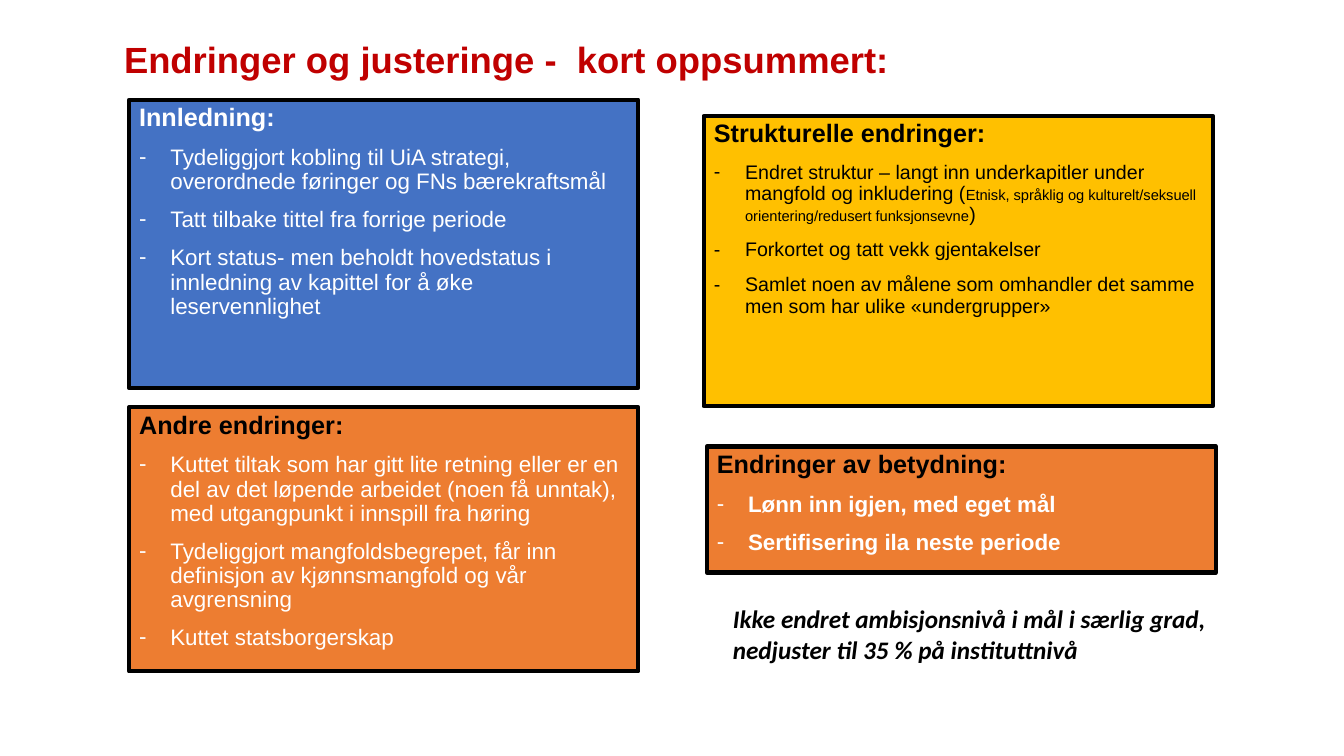
from dataclasses import dataclass

from lxml import etree
from pptx import Presentation
from pptx import util as u
from pptx.dml.color import RGBColor
from pptx.enum import text
from pptx.oxml.ns import qn

CELL = 0.1  # side of a grid cell in inches
BLUE, YELLOW, ORANGE = "4472C4", "FFC000", "ED7D31"
RED, BLACK, WHITE = "C00000", "000000", "FFFFFF"
SMALL = 10.5


@dataclass
class Panel:
    placeholder: int
    col: float
    row: float
    rows: float
    fill: str
    heading: str
    heading_color: str
    items: list[list[str]]  # odd runs of an item are set small
    size: float = 16
    color: str = WHITE
    bold: bool = False
    cols: float = 50.5


PANELS = [
    Panel(1, 12.8, 9.9, 28.6, BLUE, "Innledning:", WHITE, [
        ["Tydeliggjort kobling til UiA strategi, overordnede føringer og FNs bærekraftsmål"],
        ["Tatt tilbake tittel fra forrige periode"],
        ["Kort status- men beholdt hovedstatus i innledning av kapittel for å øke leservennlighet"],
    ]),
    Panel(2, 69.8, 11.5, 28.8, YELLOW, "Strukturelle endringer:", BLACK, [
        ["Endret struktur – langt inn underkapitler under mangfold og inkludering (",
         "Etnisk, språklig og kulturelt/seksuell orientering/redusert funksjonsevne", ")"],
        ["Forkortet og tatt vekk gjentakelser"],
        ["Samlet noen av målene som omhandler det samme men som har ulike «undergrupper»"],
    ], size=14, color=BLACK),
    Panel(3, 12.8, 40.4, 26.2, ORANGE, "Andre endringer:", BLACK, [
        ["Kuttet tiltak som har gitt lite retning eller er en del av det løpende arbeidet "
         "(noen få unntak), med utgangpunkt i innspill fra høring"],
        ["Tydeliggjort mangfoldsbegrepet, får inn definisjon av kjønnsmangfold og vår avgrensning"],
        ["Kuttet statsborgerskap"],
    ]),
    Panel(4, 70.1, 44.3, 12.5, ORANGE, "Endringer av betydning:", BLACK, [
        ["Lønn inn igjen, med eget mål"],
        ["Sertifisering ila neste periode"],
    ], bold=True),
]


def rgb(color: str) -> RGBColor:
    return RGBColor.from_string(color)


def grid(n: float) -> int:
    return u.Inches(n * CELL)


def place(sp, col: float, row: float, cols: float, rows: float) -> None:
    sp.left, sp.top, sp.width, sp.height = map(grid, (col, row, cols, rows))


def set_frame(tf) -> None:
    tf.word_wrap = True
    tf.auto_size = text.MSO_AUTO_SIZE.NONE
    tf.vertical_anchor = text.MSO_ANCHOR.TOP


def style(r, size: float, color: str, bold: bool, name: str = "Arial") -> None:
    r.font.size, r.font.bold, r.font.name = u.Pt(size), bold, name
    r.font.color.rgb = rgb(color)


def set_paragraph(p, before: float = 0, hang: float = 0, bullet: str = "") -> None:
    pPr = p._p.get_or_add_pPr()
    pPr.set("marL", str(u.Inches(hang)))
    pPr.set("indent", str(-u.Inches(hang)))
    if bullet:
        etree.SubElement(pPr, qn("a:buChar")).set("char", bullet)
    else:
        etree.SubElement(pPr, qn("a:buNone"))
    p.alignment = text.PP_ALIGN.LEFT
    p.line_spacing = 0.9
    p.space_before = u.Pt(before)


def draw_panel(s, panel: Panel) -> None:
    sp = s.placeholders[panel.placeholder]
    place(sp, panel.col, panel.row, panel.cols, panel.rows)
    sp.fill.solid()
    sp.fill.fore_color.rgb = rgb(panel.fill)
    sp.line.color.rgb = rgb(BLACK)
    sp.line.width = u.Pt(3)
    tf = sp.text_frame
    set_frame(tf)

    # Heading
    p = tf.paragraphs[0]
    p.text = panel.heading
    set_paragraph(p)
    style(p.runs[0], 18, panel.heading_color, True)

    # Dashed list
    for item in panel.items:
        p = tf.add_paragraph()
        set_paragraph(p, before=10, hang=0.31, bullet="-")
        for i, part in enumerate(item):
            r = p.add_run()
            r.text = part
            style(r, SMALL if i % 2 else panel.size, panel.color, panel.bold)


def main() -> None:
    prs = Presentation()
    prs.slide_width, prs.slide_height = u.Inches(13.33), u.Inches(7.5)
    s = prs.slides.add_slide(prs.slide_layouts.get_by_name("Comparison"))

    # Title
    title = s.shapes.title
    place(title, 11.3, 3.7, 105.5, 9.2)
    title.text_frame.text = "Endringer og justeringe -  kort oppsummert:"
    set_frame(title.text_frame)
    p = title.text_frame.paragraphs[0]
    set_paragraph(p)
    style(p.runs[0], 26, RED, True)

    # Four panels
    for panel in PANELS:
        draw_panel(s, panel)

    # Closing remark
    tb = s.shapes.add_textbox(*map(grid, (71.7, 59.4, 57.6, 7.1)))
    tf = tb.text_frame
    set_frame(tf)
    tf.text = "Ikke endret ambisjonsnivå i mål i særlig grad, nedjuster til 35 % på instituttnivå"
    r = tf.paragraphs[0].runs[0]
    style(r, 18, BLACK, True, "Calibri")
    r.font.italic = True

    prs.save("out.pptx")


if __name__ == "__main__":
    main()
